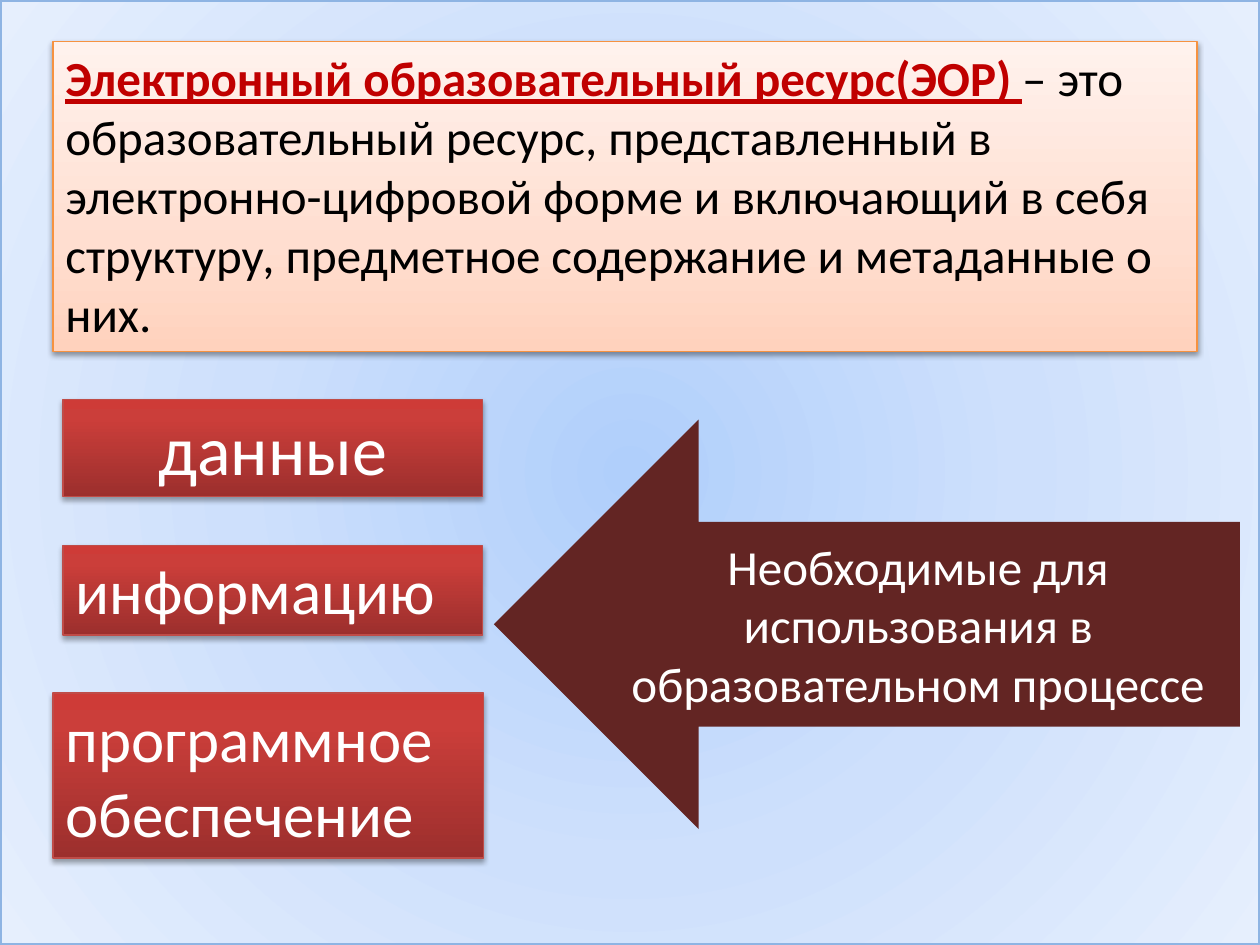
from lxml.etree import SubElement
from pptx import Presentation
from pptx.dml.color import RGBColor
from pptx.enum.shapes import MSO_SHAPE as Shape
from pptx.enum.text import MSO_ANCHOR as Anchor, MSO_AUTO_SIZE as AutoSize, PP_ALIGN as Align
from pptx.oxml.ns import qn
from pptx.util import Inches, Pt

WHITE = RGBColor(0xFF, 0xFF, 0xFF)
BLACK = RGBColor(0x00, 0x00, 0x00)
TERM_RED = RGBColor(0xC0, 0x00, 0x00)
MAROON = RGBColor(0x63, 0x25, 0x23)
FRAME_BLUE = RGBColor(0x8E, 0xB4, 0xE3)
ORANGE = RGBColor(0xF6, 0x92, 0x40)
BRICK = RGBColor(0xBF, 0x4C, 0x48)
BLUE_GLOW = [(0, RGBColor(0xB0, 0xCF, 0xFB)), (50, RGBColor(0xCE, 0xE0, 0xFC)),
             (100, RGBColor(0xE6, 0xEF, 0xFD))]
PEACH = [(0, RGBColor(0xFF, 0xD2, 0xBD)), (35, RGBColor(0xFF, 0xDE, 0xD0)),
         (100, RGBColor(0xFF, 0xF2, 0xED))]
RED = [(0, RGBColor(0x9C, 0x2F, 0x2D)), (80, RGBColor(0xCB, 0x3E, 0x3A)),
       (100, RGBColor(0xCE, 0x3B, 0x37))]


class SlideBuilder:
    font = "Calibri"

    def __init__(self, page):
        self.page = page

    def shape(self, kind, left, top, width, height, line=None, weight=0.75):
        shape = self.page.shapes.add_shape(
            kind, Inches(left), Inches(top), Inches(width), Inches(height))
        shape.shadow.inherit = False
        if line is None:
            shape.line.fill.background()
        else:
            shape.line.color.rgb = line
            shape.line.width = Pt(weight)
        return shape

    def gradient(self, shape, stops, radial=False):
        shape.fill.gradient()
        fill = shape._element.spPr.find(qn("a:gradFill"))
        for child in list(fill):
            fill.remove(child)
        stop_list = SubElement(fill, qn("a:gsLst"))
        for percent, color in stops:
            stop = SubElement(stop_list, qn("a:gs"), pos=str(percent * 1000))
            SubElement(stop, qn("a:srgbClr"), val=str(color))
        if radial:
            focus = SubElement(fill, qn("a:path"), path="circle")
            SubElement(focus, qn("a:fillToRect"), l="50000", t="50000", r="50000", b="50000")
        else:
            SubElement(fill, qn("a:lin"), ang="16200000", scaled="1")

    def shadow(self, shape, opacity, distance):
        effects = shape._element.spPr.find(qn("a:effectLst"))
        shadow = SubElement(effects, qn("a:outerShdw"), blurRad=str(Pt(3.1)),
                            dist=str(Pt(distance)), dir="5400000", rotWithShape="0")
        color = SubElement(shadow, qn("a:srgbClr"), val=str(BLACK))
        SubElement(color, qn("a:alpha"), val=str(opacity * 1000))

    def style(self, span, size, color, strong=False):
        span.font.name = self.font
        span.font.size = Pt(size)
        span.font.color.rgb = color
        span.font.bold = strong
        span.font.underline = strong

    def text(self, shape, text, size, color, align=Align.LEFT, anchor=Anchor.TOP):
        frame = shape.text_frame
        frame.word_wrap = True
        frame.vertical_anchor = anchor
        frame.text = text
        para = frame.paragraphs[0]
        para.alignment = align
        self.style(para.runs[0], size, color)
        return para

    def backdrop(self, width, height):
        shape = self.shape(Shape.RECTANGLE, 0, 0, width, height, FRAME_BLUE, 2)
        self.gradient(shape, BLUE_GLOW, radial=True)

    def card(self, place, stops, line, opacity, distance, text, size, color, align=Align.LEFT):
        box = self.shape(Shape.RECTANGLE, *place, line)
        self.gradient(box, stops)
        self.shadow(box, opacity, distance)
        para = self.text(box, text, size, color, align)
        box.text_frame.auto_size = AutoSize.SHAPE_TO_FIT_TEXT
        return para

    def definition(self, place, term, meaning, size):
        para = self.card(place, PEACH, ORANGE, 38, 1.6, term, size, TERM_RED)
        self.style(para.runs[0], size, TERM_RED, strong=True)
        span = para.add_run()
        span.text = meaning
        self.style(span, size, BLACK)

    def arrow(self, place, text, size):
        arrow = self.shape(Shape.LEFT_ARROW, *place)
        arrow.fill.solid()
        arrow.fill.fore_color.rgb = MAROON
        self.text(arrow, text, size, WHITE, Align.CENTER, Anchor.MIDDLE)


def main():
    deck = Presentation()
    deck.slide_width, deck.slide_height = Inches(10), Inches(7.5)
    builder = SlideBuilder(deck.slides.add_slide(deck.slide_layouts[6]))

    # Background
    builder.backdrop(10, 7.5)

    # Definition
    builder.definition(
        (0.42, 0.33, 9.08, 2.46), "Электронный образовательный ресурс(ЭОР) ",
        "– это образовательный ресурс, представленный в электронно-цифровой форме "
        "и включающий в себя структуру, предметное содержание и метаданные о них.", 28)

    # Contents of the resource
    for place, text, size, align in [
        ((0.5, 3.17, 3.33, 0.77), "данные", 40, Align.CENTER),
        ((0.5, 4.33, 3.33, 0.71), "информацию", 36, Align.LEFT),
        ((0.42, 5.5, 3.42, 1.31), "программное обеспечение", 36, Align.LEFT),
    ]:
        builder.card(place, RED, BRICK, 35, 1.8, text, size, WHITE, align)

    # Purpose
    builder.arrow((3.92, 3.33, 5.92, 3.25),
                  "Необходимые для использования в образовательном процессе", 28)

    deck.save("out.pptx")


if __name__ == "__main__":
    main()
